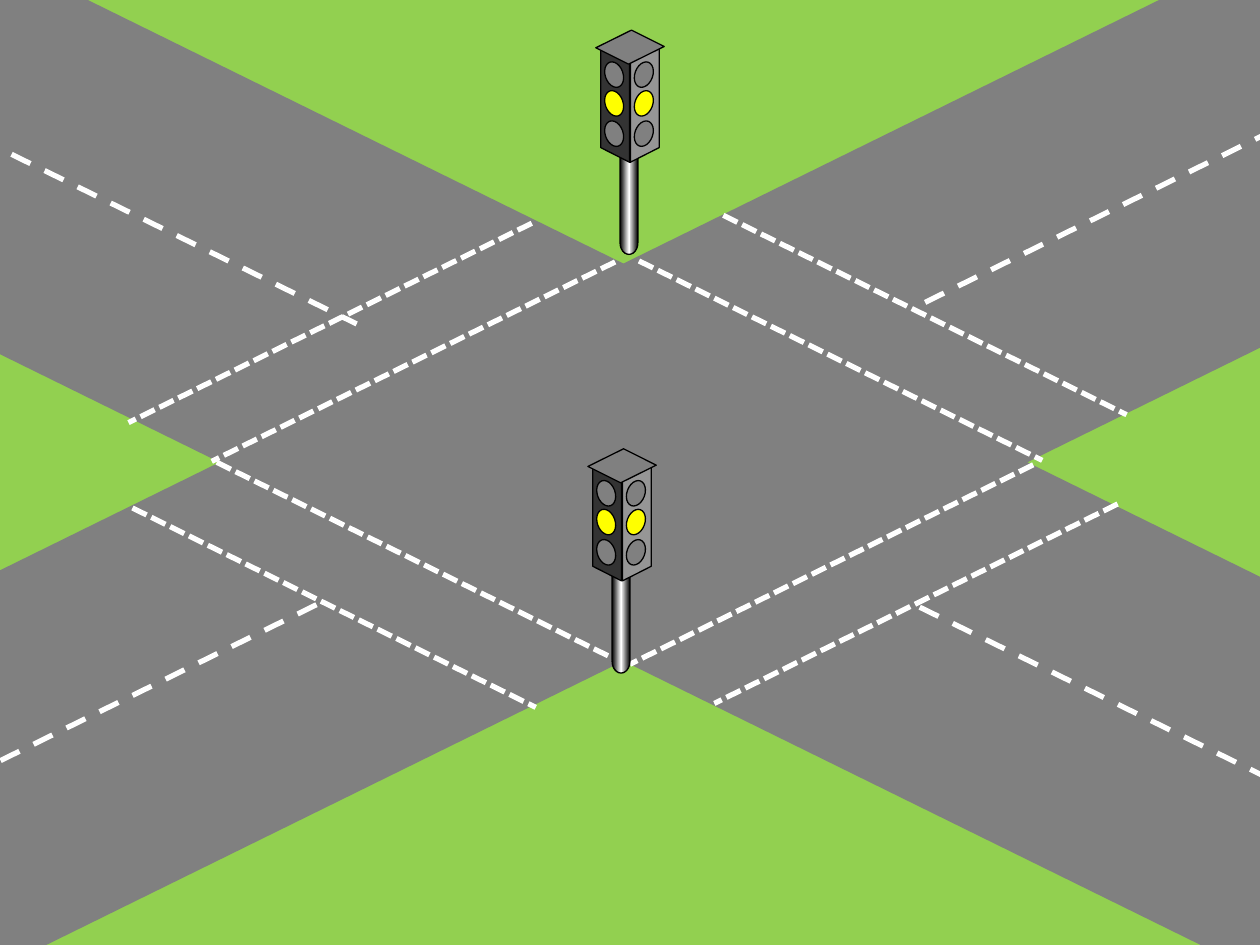
import copy

import pptx
import pptx.dml.color
import pptx.enum.dml
import pptx.enum.shapes
import pptx.oxml.ns
import pptx.util

Cm = pptx.util.Cm
SHAPE = pptx.enum.shapes.MSO_SHAPE
DASH = pptx.enum.dml.MSO_LINE

THEME = {
    "grass": "92D050", "road": "808080", "marking": "FFFFFF", "outline": "000000",
    "dark_face": "333333", "light_face": "969696", "roof": "808080",
    "lamp_off": "808080", "lamp_on": "FFFF00",
    "pole": ["000000", "FFFFFF", "000000"],
    "marking_width": 3, "outline_width": 0.75,
}

# All lengths are in centimetres.
ROADS = [(-10.8, 6.55, 333.8), (-8.26, 6.15, 26.2)]  # left, top, rotation
ROAD_SIZE = (43.38, 7.19)

LANE_LINES = [
    (-9.09, -1.47, 7.19, 6.53),
    (6.38, 12.19, -10.87, 20.7),
    (35.66, -2.31, 18.44, 6.2),
    (18.54, 12.24, 34.85, 20.24),
]

CROSSING_SPAN = (8.13, 4.02)
CROSSINGS = {  # horizontal direction: upper ends of the dotted lines
    -1: [(20.83, 9.37), (22.53, 10.16), (10.72, 4.5), (12.4, 5.28)],
    1: [(4.37, 9.32), (2.67, 10.24), (14.58, 4.34), (12.88, 5.26)],
}

LIGHTS = [(12.34, 9.96), (12.5, 1.52)]  # top left of each pole
FACE_SIZE = (2.34, 0.58)
LAMP_SIZE = (0.36, 0.53)
LAMP_COLUMNS = [(-0.3, 341), (0.3, 20)]  # offset from the pole, rotation
LAMP_ROWS = [(-0.28, "lamp_off"), (0.3, "lamp_on"), (0.91, "lamp_off")]


def rgb(value):
    return pptx.dml.color.RGBColor.from_string(value)


def add_block(slide, kind, at, size, fill=None, rotation=0, adj=None,
              flip=False, outline=True):
    sp = slide.shapes.add_shape(kind, *(Cm(v) for v in (*at, *size)))
    sp.shadow.inherit = False
    sp.rotation = rotation
    if fill:
        sp.fill.solid()
        sp.fill.fore_color.rgb = rgb(THEME[fill])
    if adj is not None:
        sp.adjustments[0] = adj
    if flip:
        sp._element.spPr.xfrm.set("flipH", "1")
    if outline:
        sp.line.color.rgb = rgb(THEME["outline"])
        sp.line.width = pptx.util.Pt(THEME["outline_width"])
    else:
        sp.line.fill.background()
    return sp


def add_marking(slide, x1, y1, x2, y2, dash):
    line = slide.shapes.add_connector(
        pptx.enum.shapes.MSO_CONNECTOR.STRAIGHT, Cm(x1), Cm(y1), Cm(x2), Cm(y2))
    line.line.color.rgb = rgb(THEME["marking"])
    line.line.width = pptx.util.Pt(THEME["marking_width"])
    line.line.dash_style = dash
    pptx.oxml.ns.qn("a:effectLst")
    line._element.spPr.append(
        line._element.spPr.makeelement(pptx.oxml.ns.qn("a:effectLst"), {}))


def fill_gradient(sp, colors):
    """Fill from left to right with evenly spaced colours (three of them)."""
    sp.fill.gradient()
    sp.fill.gradient_angle = 0
    stops = sp._element.spPr.find(".//" + pptx.oxml.ns.qn("a:gsLst"))
    stops.insert(1, copy.deepcopy(stops[0]))
    for i, (stop, color) in enumerate(zip(sp.fill.gradient_stops, colors)):
        stop.color.rgb = rgb(color)
        stop.position = i / (len(colors) - 1)


def add_traffic_light(slide, x, y):
    pole = add_block(slide, SHAPE.CAN, (x, y), (0.36, 3.61), adj=1.317)
    fill_gradient(pole, THEME["pole"])
    add_block(slide, SHAPE.PARALLELOGRAM, (x - 1.27, y + 0.29), FACE_SIZE,
              "dark_face", rotation=270, adj=0.51)
    add_block(slide, SHAPE.PARALLELOGRAM, (x - 0.67, y + 0.29), FACE_SIZE,
              "light_face", rotation=90, adj=0.51, flip=True)
    add_block(slide, SHAPE.PARALLELOGRAM, (x - 0.41, y - 0.89), (1.22, 0.64),
              "roof", rotation=206.6, adj=0.754)
    for dx, rotation in LAMP_COLUMNS:
        for dy, fill in LAMP_ROWS:
            add_block(slide, SHAPE.OVAL, (x + dx, y + dy), LAMP_SIZE, fill, rotation)


def main():
    prs = pptx.Presentation()
    prs.slide_width, prs.slide_height = Cm(25.4), Cm(19.05)
    s = prs.slides.add_slide(prs.slide_layouts[6])
    s.background.fill.solid()
    s.background.fill.fore_color.rgb = rgb(THEME["grass"])

    for left, top, rotation in ROADS:
        add_block(s, SHAPE.RECTANGLE, (left, top), ROAD_SIZE, "road", rotation,
                  outline=False)
    for ends in LANE_LINES:
        add_marking(s, *ends, DASH.DASH)
    width, height = CROSSING_SPAN
    for direction, starts in CROSSINGS.items():
        for x, y in starts:
            add_marking(s, x, y, x + direction * width, y + height, DASH.SQUARE_DOT)
    for x, y in LIGHTS:
        add_traffic_light(s, x, y)
    prs.save("out.pptx")


if __name__ == "__main__":
    main()
